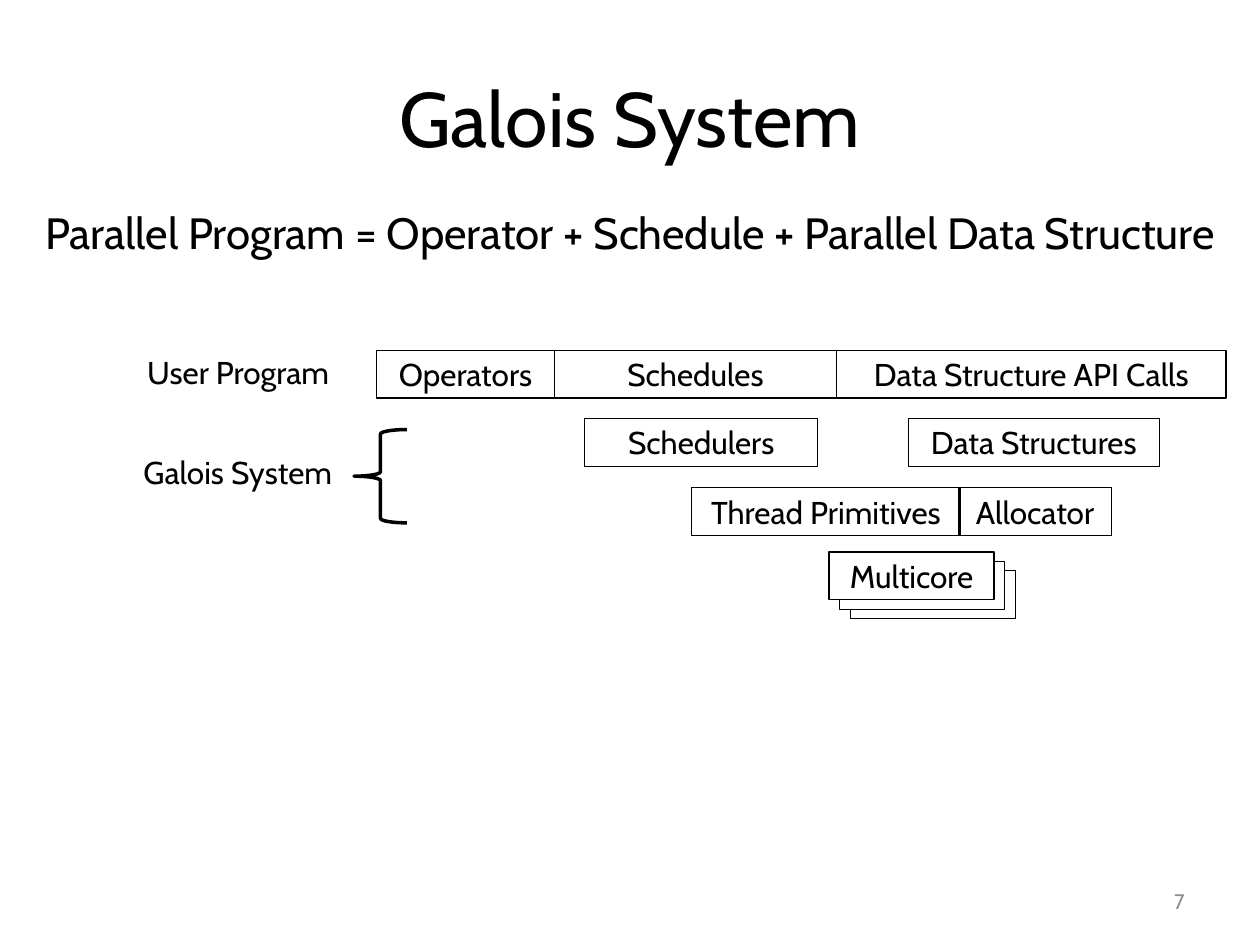
from dataclasses import dataclass

from pptx import Presentation
from pptx.dml.color import RGBColor
from pptx.enum.shapes import MSO_SHAPE
from pptx.enum.text import MSO_ANCHOR, PP_ALIGN
from pptx.util import Inches, Pt

RECT, BRACE = MSO_SHAPE.RECTANGLE, MSO_SHAPE.LEFT_BRACE
TOP, MIDDLE = MSO_ANCHOR.TOP, MSO_ANCHOR.MIDDLE
LEFT, CENTER, RIGHT = PP_ALIGN.LEFT, PP_ALIGN.CENTER, PP_ALIGN.RIGHT

BLACK = RGBColor(0x00, 0x00, 0x00)
WHITE = RGBColor(0xFF, 0xFF, 0xFF)
GRAY = RGBColor(0x8C, 0x8C, 0x8C)
FONT = "Cabin"

BOX_H = 0.38
USER_Y, RUNTIME_Y, BASE_Y, CORE_Y = 2.78, 3.32, 3.87, 4.38
CORE_X, CORE_W = 6.58, 1.31
CORE_COUNT, CORE_DX, CORE_DY = 3, 0.085, 0.075


@dataclass
class Box:
    text: str
    x: float
    y: float
    w: float
    filled: bool = False


@dataclass
class Label:
    text: str
    x: float
    y: float
    w: float
    h: float
    size: float = 18
    align: PP_ALIGN = LEFT
    anchor: MSO_ANCHOR = TOP
    color: RGBColor = BLACK
    wrap: bool = False


BOXES = [
    Box("Operators", 2.99, USER_Y, 1.41),
    Box("Schedules", 4.4, USER_Y, 2.24),
    Box("Data Structure API Calls", 6.64, USER_Y, 3.09),
    Box("Schedulers", 4.64, RUNTIME_Y, 1.85),
    Box("Data Structures", 7.21, RUNTIME_Y, 1.99),
    Box("Thread Primitives", 5.49, BASE_Y, 2.13),
    Box("Allocator", 7.61, BASE_Y, 1.21),
]
CORES = [
    Box("" if i else "Multicore", CORE_X + i * CORE_DX, CORE_Y + i * CORE_DY, CORE_W, True)
    for i in reversed(range(CORE_COUNT))
]
LABELS = [
    Label("Parallel Program = Operator + Schedule + Parallel Data Structure",
          0, 1.45, 10, 0.78, 25, CENTER, MIDDLE, wrap=True),
    Label("User Program", 1.07, 2.75, 1.65, 0.4),
    Label("Galois System", 1.04, 3.55, 1.7, 0.4),
    Label("7", 7.17, 6.95, 2.33, 0.4, 12, RIGHT, MIDDLE, GRAY, True),
]


def write(sp, text: str, size: float, align: PP_ALIGN = CENTER,
          anchor: MSO_ANCHOR = MIDDLE, color: RGBColor = BLACK, wrap: bool = True) -> None:
    tf = sp.text_frame
    tf.text = text
    tf.word_wrap = wrap
    tf.vertical_anchor = anchor
    p = tf.paragraphs[0]
    p.alignment = align
    for r in p.runs:
        r.font.name = FONT
        r.font.size = Pt(size)
        r.font.color.rgb = color


def add_outline(slide, kind: MSO_SHAPE, x: float, y: float, w: float, h: float,
                weight: float):
    sp = slide.shapes.add_shape(kind, Inches(x), Inches(y), Inches(w), Inches(h))
    sp.shadow.inherit = False
    sp.fill.background()
    sp.line.color.rgb = BLACK
    sp.line.width = Pt(weight)
    return sp


def add_box(slide, box: Box) -> None:
    sp = add_outline(slide, RECT, box.x, box.y, box.w, BOX_H, 0.75)
    if box.filled:
        sp.fill.solid()
        sp.fill.fore_color.rgb = WHITE
    if box.text:
        write(sp, box.text, 18)


def add_label(slide, label: Label) -> None:
    sp = slide.shapes.add_textbox(Inches(label.x), Inches(label.y),
                                  Inches(label.w), Inches(label.h))
    write(sp, label.text, label.size, label.align, label.anchor, label.color, label.wrap)


def main() -> None:
    prs = Presentation()
    prs.slide_width, prs.slide_height = Inches(10), Inches(7.5)
    slide = prs.slides.add_slide(prs.slide_layouts[5])

    title = slide.shapes.title
    title.left, title.top = Inches(0.5), Inches(0.3)
    title.width, title.height = Inches(9), Inches(1.25)
    write(title, "Galois System", 44)

    for box in BOXES + CORES:
        add_box(slide, box)
    for label in LABELS:
        add_label(slide, label)
    add_outline(slide, BRACE, 2.81, 3.41, 0.42, 0.74, 2)

    prs.save("out.pptx")


if __name__ == "__main__":
    main()
